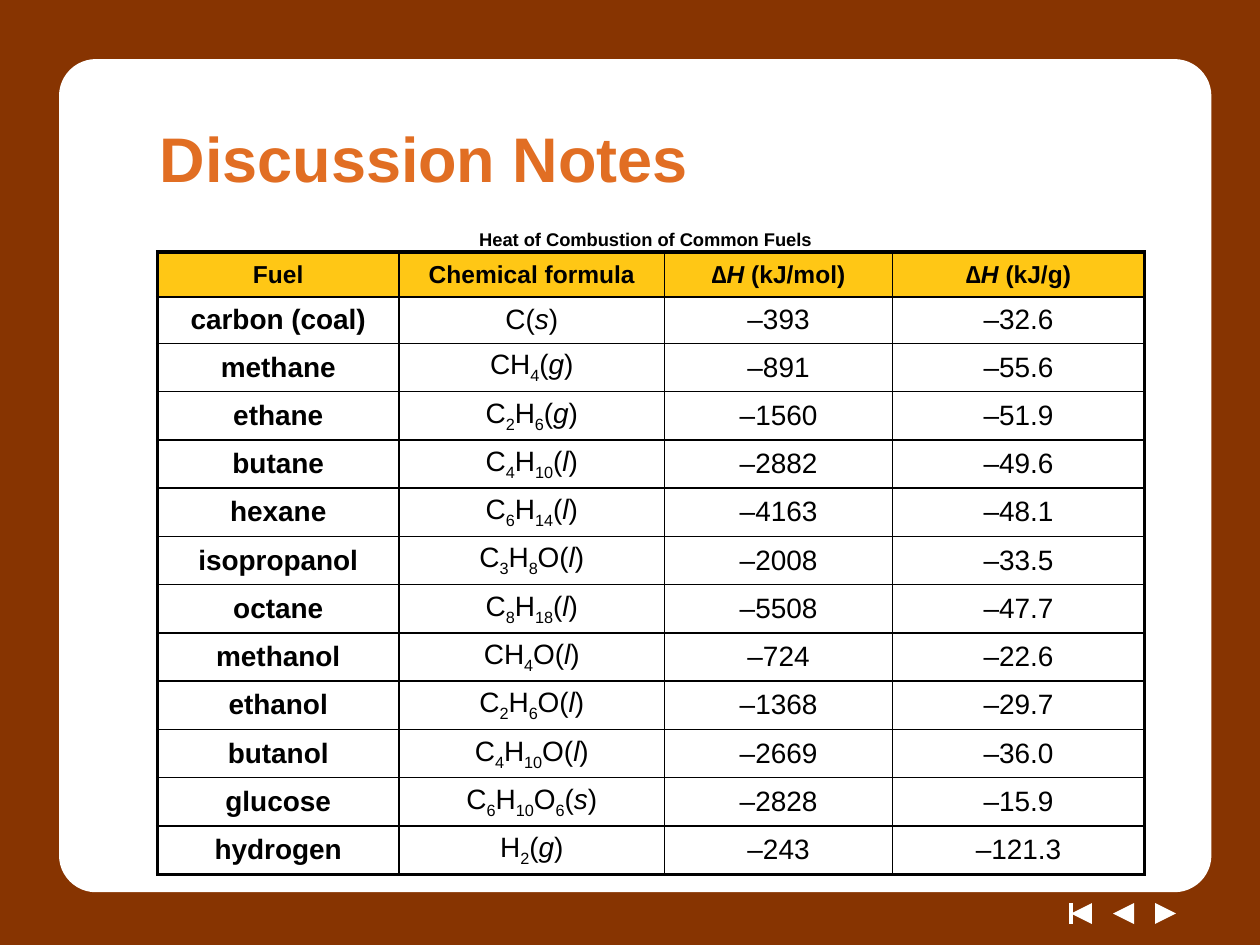
from dataclasses import dataclass
from itertools import groupby

from lxml import etree
from pptx import Presentation
from pptx import util as u
from pptx.dml.color import RGBColor
from pptx.enum import shapes, text
from pptx.oxml import ns


@dataclass
class Theme:
    font: str = "Arial"
    brown: str = "873401"
    orange: str = "E16E23"
    gold: str = "FFC715"
    white: str = "FFFFFF"
    black: str = "000000"
    title: float = 36
    note: float = 10.5
    head: float = 14
    body: float = 16
    thin: float = 1
    thick: float = 2.25


HEADS = [
    [("Fuel", "")],
    [("Chemical formula", "")],
    [("∆", ""), ("H ", "i"), ("(kJ/mol)", "")],
    [("∆", ""), ("H ", "i"), ("(kJ/g)", "")],
]
FUELS = [
    ("carbon (coal)", "C", "s", "–393", "–32.6"),
    ("methane", "CH4", "g", "–891", "–55.6"),
    ("ethane", "C2H6", "g", "–1560", "–51.9"),
    ("butane", "C4H10", "l", "–2882", "–49.6"),
    ("hexane", "C6H14", "l", "–4163", "–48.1"),
    ("isopropanol", "C3H8O", "l", "–2008", "–33.5"),
    ("octane", "C8H18", "l", "–5508", "–47.7"),
    ("methanol", "CH4O", "l", "–724", "–22.6"),
    ("ethanol", "C2H6O", "l", "–1368", "–29.7"),
    ("butanol", "C4H10O", "l", "–2669", "–36.0"),
    ("glucose", "C6H10O6", "s", "–2828", "–15.9"),
    ("hydrogen", "H2", "g", "–243", "–121.3"),
]


def parts(formula, state):
    """Split a formula into runs: digits are lowered, the state is italic."""
    runs = [("".join(group), "sub" if low else "")
            for low, group in groupby(formula + "(", str.isdigit)]
    return runs + [(state, "i"), (")", "")]


def rgb(color):
    return RGBColor.from_string(color)


class Deck:
    """Places elements on a grid of 120 columns by 90 rows."""

    def __init__(self, theme):
        self.theme = theme
        self.file = Presentation()
        self.file.slide_width, self.file.slide_height = u.Inches(10), u.Inches(7.5)
        self.unit = self.file.slide_width / 120
        self.slide = self.file.slides.add_slide(self.file.slide_layouts[5])

    def grid(self, *cells):
        return [round(cell * self.unit) for cell in cells]

    def shape(self, kind, box, fill, turn=0, edge=0):
        item = self.slide.shapes.add_shape(kind, *self.grid(*box))
        item.shadow.inherit = False
        item.rotation = turn
        item.fill.solid()
        item.fill.fore_color.rgb = rgb(fill)
        if edge:
            item.line.color.rgb = rgb(fill)
            item.line.width = u.Pt(edge)
        else:
            item.line.fill.background()
        return item

    def line(self, ends, color, width):
        item = self.slide.shapes.add_connector(
            shapes.MSO_CONNECTOR.STRAIGHT, *self.grid(*ends))
        item.line.color.rgb = rgb(color)
        item.line.width = u.Pt(width)
        etree.SubElement(item._element.spPr, ns.qn("a:effectLst"))

    def label(self, para, runs, size, color, bold=True):
        for words, style in runs:
            run = para.add_run()
            run.text = words
            font = run.font
            font.name, font.size, font.bold = self.theme.font, u.Pt(size), bold
            font.color.rgb = rgb(color)
            if style == "i":
                font.italic = True
            elif style == "sub":
                run._r.get_or_add_rPr().set("baseline", "-25000")

    def title(self, words, box):
        item = self.slide.shapes.title
        item.left, item.top, item.width, item.height = self.grid(*box)
        frame = item.text_frame
        frame.vertical_anchor = text.MSO_ANCHOR.MIDDLE
        frame.paragraphs[0].alignment = text.PP_ALIGN.LEFT
        self.label(frame.paragraphs[0], [(words, "")],
                   self.theme.title, self.theme.orange)
        self.slide.shapes._spTree.append(item._element)  # in front of the card

    def note(self, words, box):
        frame = self.slide.shapes.add_textbox(*self.grid(*box)).text_frame
        frame.word_wrap = True
        frame.vertical_anchor = text.MSO_ANCHOR.BOTTOM
        frame.margin_bottom = 0
        frame.paragraphs[0].alignment = text.PP_ALIGN.CENTER
        self.label(frame.paragraphs[0], [(words, "")],
                   self.theme.note, self.theme.black)

    def edge(self, cell, side, width):
        line = etree.SubElement(cell._tc.get_or_add_tcPr(),
                                ns.qn("a:ln" + side), w=str(u.Pt(width)))
        fill = etree.SubElement(line, ns.qn("a:solidFill"))
        etree.SubElement(fill, ns.qn("a:srgbClr"), val=self.theme.black)

    def cell(self, cell, runs, size, bold, fill, thick):
        cell.vertical_anchor = text.MSO_ANCHOR.MIDDLE
        for side in "LRTB":
            self.edge(cell, side,
                      self.theme.thick if side in thick else self.theme.thin)
        if fill:
            cell.fill.solid()
            cell.fill.fore_color.rgb = rgb(fill)
        else:
            cell.fill.background()
        para = cell.text_frame.paragraphs[0]
        para.alignment = text.PP_ALIGN.CENTER
        gap = etree.SubElement(para._p.get_or_add_pPr(), ns.qn("a:spcBef"))
        etree.SubElement(gap, ns.qn("a:spcPct"), val="20000")
        self.label(para, runs, size, self.theme.black, bold)

    def table(self, rows, spot, wide, high):
        box = self.grid(*spot, sum(wide), sum(high))
        table = self.slide.shapes.add_table(len(rows), len(wide), *box).table
        table.first_row = table.horz_banding = False
        for col, size in zip(table.columns, self.grid(*wide)):
            col.width = size
        for row, size in zip(table.rows, self.grid(*high)):
            row.height = size
        for r, row in enumerate(rows):
            for c, runs in enumerate(row):
                rims = {"L": c == 0, "R": c == len(wide) - 1,
                        "T": r == 0, "B": r == len(rows) - 1}
                self.cell(table.cell(r, c), runs,
                          self.theme.body if r else self.theme.head,
                          bold=r == 0 or c == 0,
                          fill=None if r else self.theme.gold,
                          thick=[side for side, rim in rims.items() if rim])


def main():
    theme = Theme()
    deck = Deck(theme)
    kind = shapes.MSO_SHAPE
    deck.shape(kind.RECTANGLE, (0, 0, 120, 90), theme.brown)
    for left, turn in ((110, 90), (106, 270), (102, 270)):
        deck.shape(kind.ISOSCELES_TRIANGLE, (left, 86, 2, 2), theme.white, turn)
    deck.line((102, 86, 102, 88), theme.white, 2)
    card = deck.shape(kind.ROUNDED_RECTANGLE, (6, 6, 109, 78.6),
                      theme.white, edge=4.5)
    card.adjustments[0] = 0.04

    deck.title("Discussion Notes", (14, 9, 97, 12))
    rows = [HEADS] + [
        [[(name, "")], parts(formula, state), [(mol, "")], [(gram, "")]]
        for name, formula, state, mol, gram in FUELS]
    deck.table(rows, (15, 24), (23, 25.3, 21.7, 24), [4.3] + [4.4] * len(FUELS))
    deck.note("Heat of Combustion of Common Fuels", (14, 19, 95, 4.8))
    deck.file.save("out.pptx")


if __name__ == "__main__":
    main()
